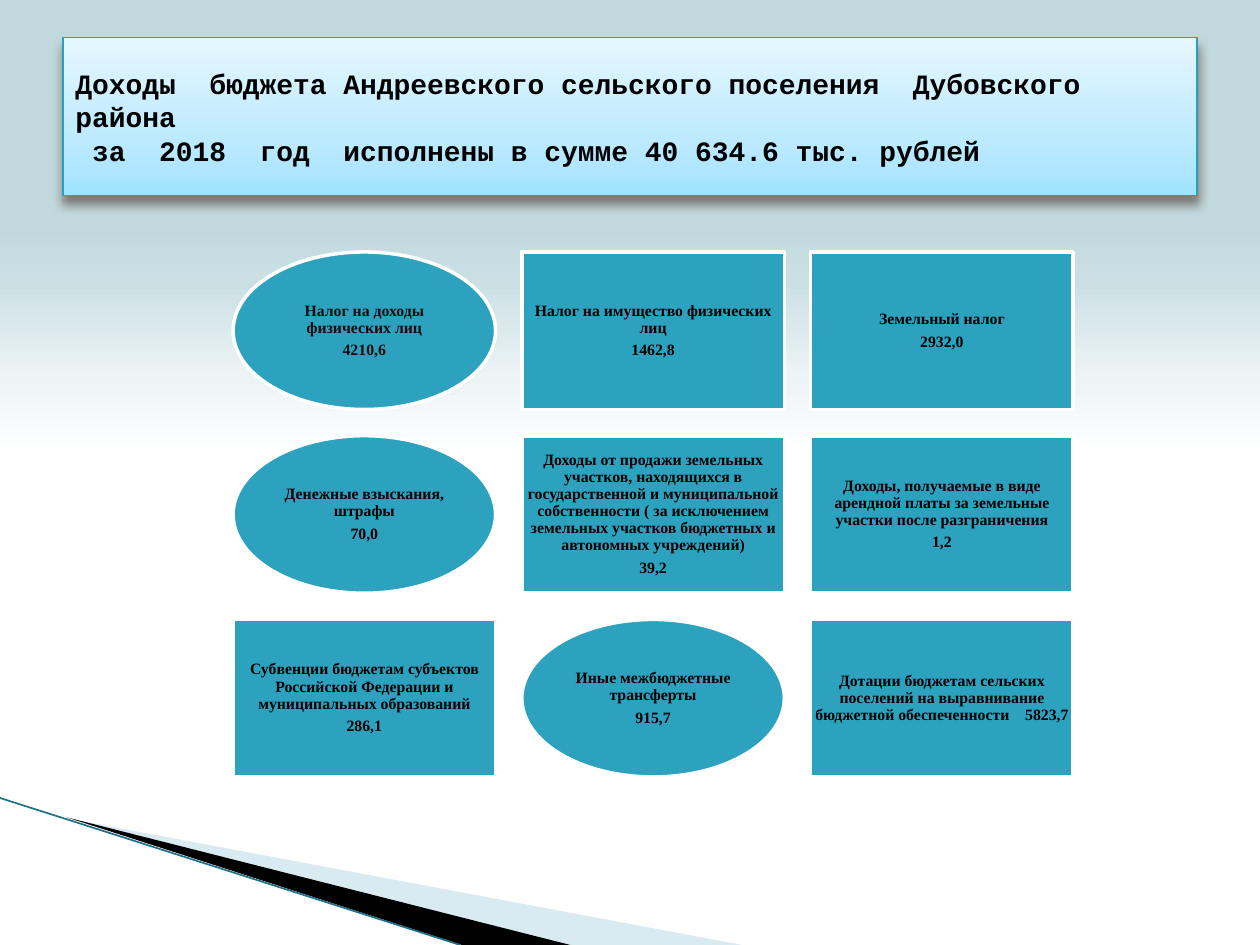
from dataclasses import dataclass
from typing import Optional

from lxml.etree import SubElement
from pptx import Presentation
from pptx.dml.color import RGBColor
from pptx.enum.shapes import MSO_CONNECTOR as Connector, MSO_SHAPE as Shape
from pptx.enum.text import MSO_ANCHOR as Anchor, PP_ALIGN as Align
from pptx.oxml import parse_xml
from pptx.oxml.ns import nsdecls, qn
from pptx.util import Pt


@dataclass(frozen=True)
class Theme:
    black: str = "000000"
    soft_black: str = "0D0D0D"
    white: str = "FFFFFF"
    tile: str = "2DA2BF"
    title_line: str = "28A1BE"
    wedge: str = "A0CBDC"
    edge: str = "1F7186"
    shadow: str = "4E3B30"
    title_stops: tuple = ((0, "A1E3FF"), (35, "BDEAFF"), (100, "E6F7FF"))
    sky_stops: tuple = ((0, "C1D9DE"), (24, "C1D9DE"), (30, "CCE0E4"),
                        (40, "EDF4F6"), (48, "FFFFFF"), (100, "FFFFFF"))
    title_font: str = "Courier New"
    tile_font: str = "Times New Roman"
    title_size: float = 16
    tile_size: float = 9


@dataclass(frozen=True)
class Tile:
    label: str
    amount: Optional[str] = None
    outline: Shape = Shape.RECTANGLE
    ink: str = Theme.black


@dataclass(frozen=True)
class Wedge:
    points: tuple
    color: str
    opacity: int = 100


THEME = Theme()
LEFT, TOP, WIDTH, HEIGHT, GAP, COLUMNS = 133.2, 144, 150, 90, 15, 3

TITLE = ("Доходы  бюджета Андреевского сельского поселения  Дубовского района\v"
         " за  2018  год  исполнены в сумме 40 634.6 тыс. рублей")

TILES = [
    Tile("Налог на доходы физических лиц", "4210,6", Shape.OVAL, THEME.soft_black),
    Tile("Налог на имущество физических лиц", "1462,8"),
    Tile("Земельный налог", "2932,0"),
    Tile("Денежные взыскания, штрафы", "70,0", Shape.OVAL),
    Tile("Доходы от продажи земельных участков, находящихся в государственной и "
         "муниципальной собственности ( за исключением земельных участков бюджетных "
         "и автономных учреждений)", "39,2"),
    Tile("Доходы, получаемые в виде арендной платы за земельные участки после "
         "разграничения", "1,2"),
    Tile("Субвенции бюджетам субъектов Российской Федерации и муниципальных "
         "образований", "286,1"),
    Tile("Иные межбюджетные трансферты", "915,7", Shape.OVAL),
    Tile("Дотации бюджетам сельских поселений на выравнивание бюджетной "
         "обеспеченности    5823,7"),
]

WEDGES = [
    Wedge(((39.6, 468.4), (424.5, 540), (325, 540)), THEME.wedge, 40),
    Wedge(((38.2, 467.3), (326, 540), (264, 540)), THEME.black),
]


def rgb(color: str) -> RGBColor:
    return RGBColor.from_string(color)


def set_gradient(owner, fill, stops: tuple, angle: float) -> None:
    fill.gradient()
    fill.gradient_angle = angle
    stop_list = next(owner.element.iter(qn("a:gsLst")))
    for old_stop in list(stop_list):
        stop_list.remove(old_stop)
    for position, color in stops:
        stop = SubElement(stop_list, qn("a:gs"), pos=str(position * 1000))
        SubElement(stop, qn("a:srgbClr"), val=color)


def style_paragraph(paragraph, font_name: str, size: float, color: str, align: Align) -> None:
    paragraph.alignment = align
    font = paragraph.font
    font.name, font.size, font.bold = font_name, Pt(size), True
    font.color.rgb = rgb(color)


def draw_wedge(slide, wedge: Wedge) -> None:
    start, *others = wedge.points
    builder = slide.shapes.build_freeform(*start, scale=Pt(1))
    builder.add_line_segments(others, close=True)
    shape = builder.convert_to_shape()
    shape.shadow.inherit = False
    shape.fill.solid()
    shape.fill.fore_color.rgb = rgb(wedge.color)
    shape.line.fill.background()
    if wedge.opacity < 100:
        color = next(shape.element.spPr.iter(qn("a:srgbClr")))
        SubElement(color, qn("a:alpha"), val=str(wedge.opacity * 1000))


def draw_edge(slide) -> None:
    edge = slide.shapes.add_connector(Connector.STRAIGHT, Pt(0), Pt(456), Pt(263), Pt(540))
    edge.line.color.rgb = rgb(THEME.edge)
    edge.line.width = Pt(0.95)
    SubElement(edge.element.spPr, qn("a:effectLst"))


def draw_title(slide) -> None:
    shape = slide.shapes.add_shape(Shape.RECTANGLE, Pt(36), Pt(21.6), Pt(648), Pt(90))
    set_gradient(shape, shape.fill, THEME.title_stops, 90)
    shape.line.color.rgb = rgb(THEME.title_line)
    shape.line.width = Pt(0.75)
    shape.element.spPr.append(parse_xml(
        f'<a:effectLst {nsdecls("a")}>'
        f'<a:outerShdw blurRad="{Pt(6)}" dist="{Pt(4)}" dir="5400000" rotWithShape="0">'
        f'<a:srgbClr val="{THEME.shadow}"><a:alpha val="60000"/></a:srgbClr>'
        '</a:outerShdw></a:effectLst>'))
    frame = shape.text_frame
    frame.word_wrap = True
    frame.vertical_anchor = Anchor.MIDDLE
    paragraph = frame.paragraphs[0]
    paragraph.text = TITLE
    style_paragraph(paragraph, THEME.title_font, THEME.title_size, THEME.black, Align.LEFT)


def draw_tile(slide, tile: Tile, left: float, top: float) -> None:
    shape = slide.shapes.add_shape(tile.outline, Pt(left), Pt(top), Pt(WIDTH), Pt(HEIGHT))
    shape.shadow.inherit = False
    shape.fill.solid()
    shape.fill.fore_color.rgb = rgb(THEME.tile)
    shape.line.color.rgb = rgb(THEME.white)
    shape.line.width = Pt(2)
    frame = shape.text_frame
    frame.word_wrap = True
    frame.vertical_anchor = Anchor.MIDDLE
    frame.margin_left = frame.margin_right = Pt(2.7)
    frame.margin_top = frame.margin_bottom = Pt(2.7)
    frame.text = "\n".join(filter(None, (tile.label, tile.amount)))
    for paragraph in frame.paragraphs:
        style_paragraph(paragraph, THEME.tile_font, THEME.tile_size, tile.ink, Align.CENTER)
        paragraph.line_spacing = 0.9
        paragraph.space_after = Pt(0.35 * THEME.tile_size)


def main() -> None:
    presentation = Presentation()
    presentation.slide_width, presentation.slide_height = Pt(720), Pt(540)
    slide = presentation.slides.add_slide(presentation.slide_layouts[6])
    set_gradient(slide, slide.background.fill, THEME.sky_stops, 270)
    for wedge in WEDGES:
        draw_wedge(slide, wedge)
    draw_edge(slide)
    draw_title(slide)
    for index, tile in enumerate(TILES):
        row, column = divmod(index, COLUMNS)
        draw_tile(slide, tile, LEFT + column * (WIDTH + GAP), TOP + row * (HEIGHT + GAP))
    presentation.save("out.pptx")


if __name__ == "__main__":
    main()
